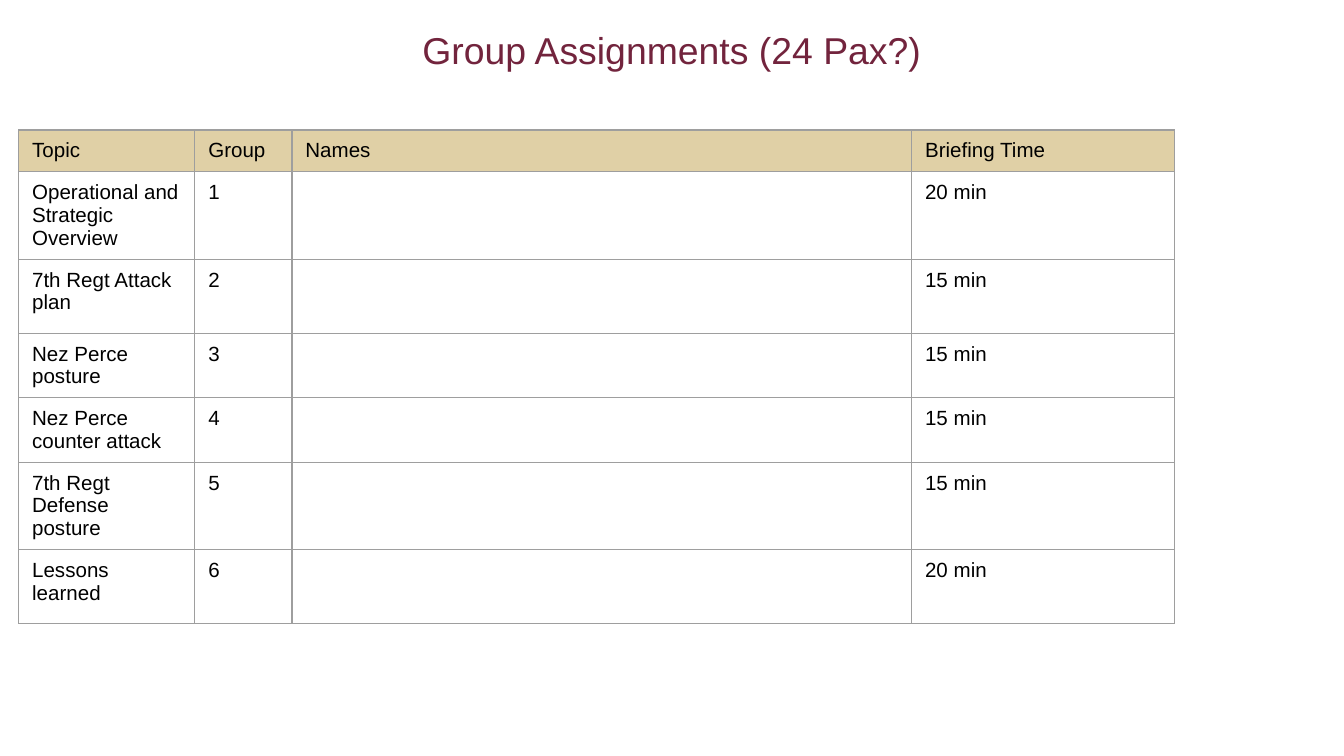
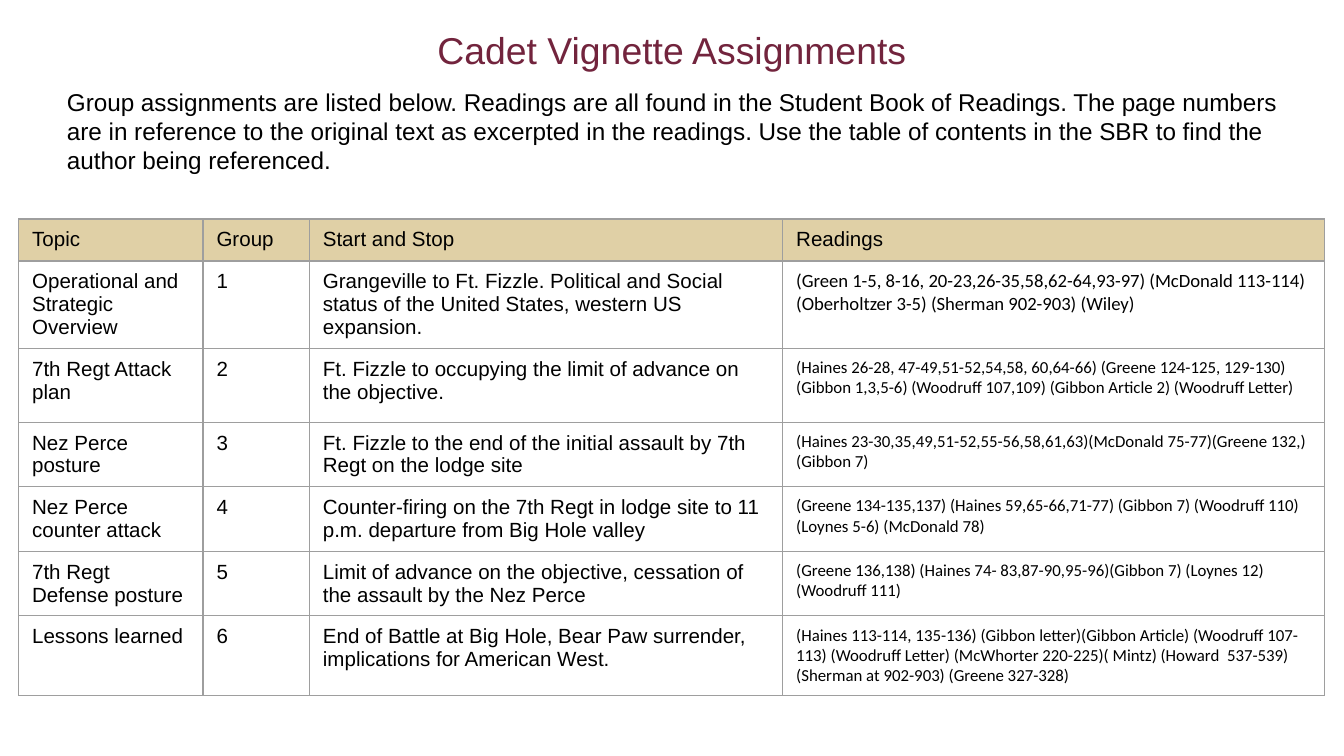
from lxml import etree
from pptx import Presentation
from pptx.dml.color import RGBColor
from pptx.enum.text import MSO_ANCHOR as Anchor, MSO_AUTO_SIZE as AutoSize, PP_ALIGN as Align
from pptx.oxml.ns import qn
from pptx.util import Pt

MAROON = RGBColor(0x72, 0x24, 0x3D)
SAND = RGBColor(0xE0, 0xD0, 0xA6)
GREY = RGBColor(0x9E, 0x9E, 0x9E)
BLACK = RGBColor(0, 0, 0)

TITLE_FONT = {"name": "Arial", "size": Pt(20), "bold": False}
INTRO_FONT = {"name": "Arial", "size": Pt(13)}
CELL_FONT = {"name": "Arial", "size": Pt(11), "bold": False}
READING_FONT = {"name": "Calibri", "size": Pt(9), "bold": False}
WIDE_READING_FONT = {**READING_FONT, "size": Pt(10)}

TITLE_BOX = {"left": Pt(72), "top": Pt(4.3), "width": Pt(576), "height": Pt(44.6)}
INTRO_BOX = {"left": Pt(28.8), "top": Pt(39.6), "width": Pt(677.5), "height": Pt(62)}
CELL_MARGINS = {"margin_left": Pt(7.2), "margin_right": Pt(7.2),
                "margin_top": Pt(5), "margin_bottom": Pt(5)}
ROW_HEIGHTS = [22.5, 46.8, 39.6, 34.6, 34.6, 34.6, 39.6]
TABLE_LEFT = 10

TOPICS = ["Operational and Strategic Overview", "7th Regt Attack plan", "Nez Perce posture",
          "Nez Perce counter attack", "7th Regt Defense posture", "Lessons learned"]
BRIEFING_MINUTES = [20, 15, 15, 15, 15, 20]
INTRO = ("Group assignments are listed below. Readings are all found in the Student Book of "
         "Readings. The page numbers are in reference to the original text as excerpted in the "
         "readings. Use the table of contents in the SBR to find the author being referenced.")
STARTS_AND_STOPS = [
    "Grangeville to Ft. Fizzle. Political and Social status of the United States, "
    "western US expansion.",
    "Ft. Fizzle to occupying the limit of advance on the objective.",
    "Ft. Fizzle to the end of the initial assault by 7th Regt on the lodge site",
    "Counter-firing on the 7th Regt in lodge site to 11 p.m. departure from Big Hole valley",
    "Limit of advance on the objective, cessation of the assault by the Nez Perce",
    "End of Battle at Big Hole, Bear Paw surrender, implications for American West.",
]
READINGS = [
    "(Green 1-5, 8-16, 20-23,26-35,58,62-64,93-97) (McDonald 113-114) (Oberholtzer 3-5) "
    "(Sherman 902-903) (Wiley)",
    "(Haines 26-28, 47-49,51-52,54,58, 60,64-66) (Greene 124-125, 129-130) (Gibbon 1,3,5-6) "
    "(Woodruff 107,109) (Gibbon Article 2) (Woodruff Letter)",
    "(Haines 23-30,35,49,51-52,55-56,58,61,63)(McDonald 75-77)(Greene 132,)(Gibbon 7)",
    "(Greene 134-135,137) (Haines 59,65-66,71-77) (Gibbon 7) (Woodruff 110) (Loynes 5-6) "
    "(McDonald 78)",
    "(Greene 136,138) (Haines 74- 83,87-90,95-96)(Gibbon 7) (Loynes 12)(Woodruff 111)",
    "(Haines 113-114, 135-136) (Gibbon letter)(Gibbon Article) (Woodruff 107-113) "
    "(Woodruff Letter) (McWhorter 220-225)( Mintz) (Howard  537-539) (Sherman at 902-903) "
    "(Greene 327-328)",
]


def assign(target, values):
    for name, value in values.items():
        setattr(target, name, value)


def write(frame, words, font, color, align=Align.LEFT):
    paragraph = frame.paragraphs[0]
    paragraph.alignment = align
    if words:
        run = paragraph.add_run()
        run.text = words
        assign(run.font, font)
        run.font.color.rgb = color


def margins(size):
    return {f"margin_{side}": size for side in ("left", "right", "top", "bottom")}


def add_titled_slide(deck, words):
    slide = deck.slides.add_slide(deck.slide_layouts[5])
    title = slide.shapes.title
    assign(title, TITLE_BOX)
    assign(title.text_frame, {**margins(Pt(3.6)), "word_wrap": True,
                              "auto_size": AutoSize.NONE, "vertical_anchor": Anchor.MIDDLE})
    write(title.text_frame, words, TITLE_FONT, MAROON, Align.CENTER)
    return slide


def add_intro(slide, box):
    intro = slide.shapes.add_textbox(**box)
    assign(intro.text_frame, {**margins(Pt(7.2)), "word_wrap": True,
                              "auto_size": AutoSize.SHAPE_TO_FIT_TEXT})
    write(intro.text_frame, INTRO, INTRO_FONT, BLACK)


def add_borders(cell):
    properties = cell._tc.get_or_add_tcPr()
    for place, side in enumerate(("lnL", "lnR", "lnT", "lnB")):
        border = etree.Element(qn(f"a:{side}"), w=str(Pt(0.75)))
        fill = etree.SubElement(border, qn("a:solidFill"))
        etree.SubElement(fill, qn("a:srgbClr"), val=str(GREY))
        properties.insert(place, border)


def add_assignments(slide, top, widths, rows, font_for):
    table = slide.shapes.add_table(len(rows), len(widths), Pt(TABLE_LEFT), Pt(top),
                                   Pt(sum(widths)), Pt(sum(ROW_HEIGHTS))).table
    assign(table, {"first_row": False, "horz_banding": False})
    for column, width in zip(table.columns, widths):
        column.width = Pt(width)
    for r, (row, height) in enumerate(zip(rows, ROW_HEIGHTS)):
        table.rows[r].height = Pt(height)
        for c, words in enumerate(row):
            cell = table.cell(r, c)
            assign(cell, {**CELL_MARGINS, "vertical_anchor": Anchor.TOP})
            write(cell.text_frame, words, font_for(r, c), BLACK)
            if r == 0:
                cell.fill.solid()
                cell.fill.fore_color.rgb = SAND
            else:
                cell.fill.background()
            add_borders(cell)


def group_font(row, column):
    return CELL_FONT


def vignette_font(row, column):
    if row == 0 or column < 3:
        return CELL_FONT
    return WIDE_READING_FONT if row == 1 else READING_FONT


def build_groups(deck):
    slide = add_titled_slide(deck, "Group Assignments (24 Pax?)")
    rows = [("Topic", "Group", "Names", "Briefing Time")]
    for number, (topic, minutes) in enumerate(zip(TOPICS, BRIEFING_MINUTES), 1):
        rows.append((topic, str(number), "", f"{minutes} min"))
    add_assignments(slide, 69.6, [94.4, 52, 332, 141], rows, group_font)


def build_vignettes(deck):
    slide = add_titled_slide(deck, "Cadet Vignette Assignments")
    rows = [("Topic", "Group", "Start and Stop", "Readings")]
    for number, (topic, span, reading) in enumerate(zip(TOPICS, STARTS_AND_STOPS, READINGS), 1):
        rows.append((topic, str(number), span, reading))
    add_assignments(slide, 117.3, [98.8, 57, 253.6, 290.2], rows, vignette_font)
    add_intro(slide, INTRO_BOX)


def main():
    deck = Presentation()
    assign(deck, {"slide_width": Pt(720), "slide_height": Pt(405)})
    build_groups(deck)
    build_vignettes(deck)
    deck.save("out.pptx")


if __name__ == "__main__":
    main()
